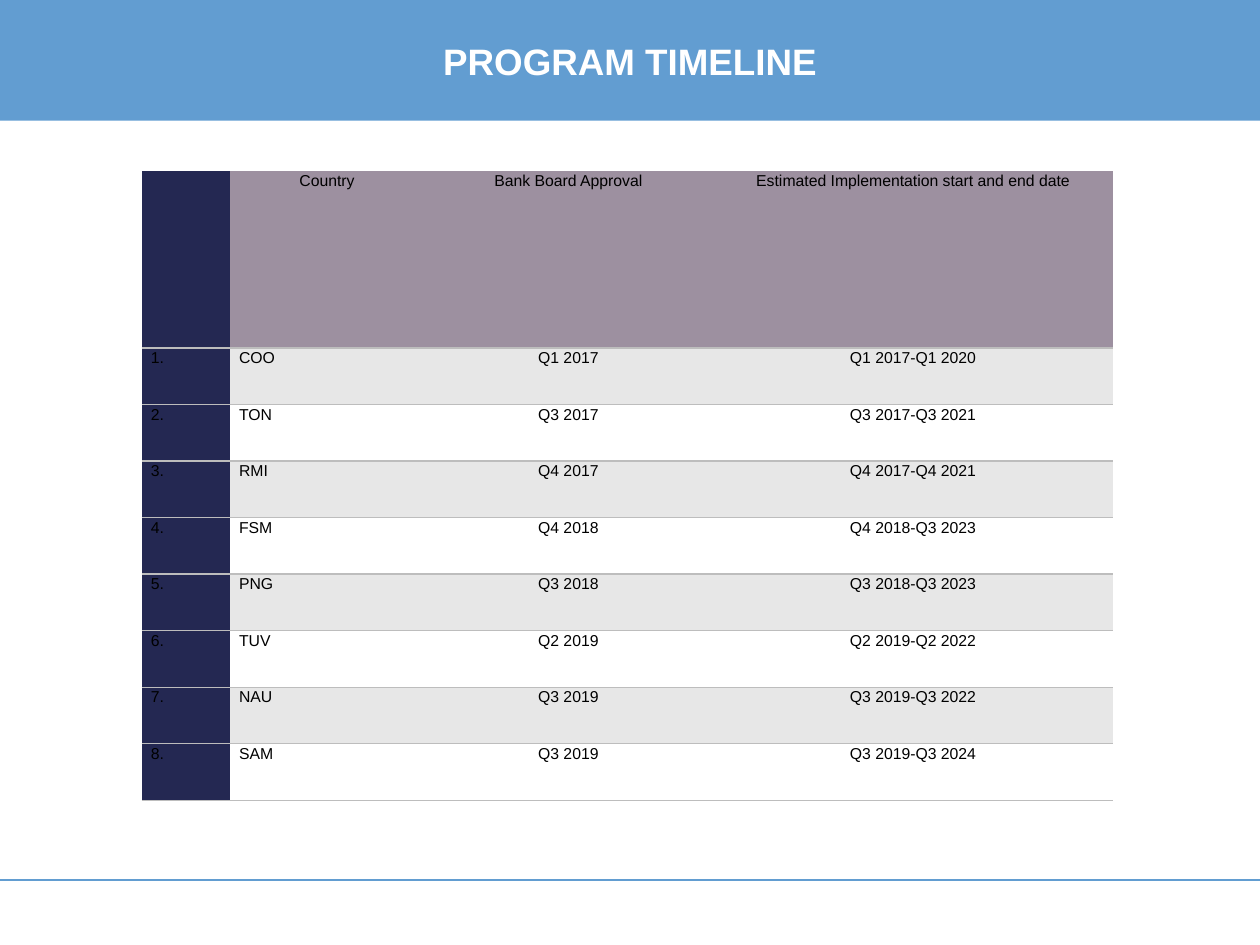
from lxml import etree
from pptx import Presentation
from pptx.dml.color import RGBColor
from pptx.enum.shapes import MSO_CONNECTOR, MSO_SHAPE
from pptx.enum.text import MSO_ANCHOR, PP_ALIGN
from pptx.oxml.ns import qn
from pptx.util import Pt

RECT = MSO_SHAPE.RECTANGLE
STRAIGHT = MSO_CONNECTOR.STRAIGHT
MIDDLE = MSO_ANCHOR.MIDDLE
LEFT, CENTER = PP_ALIGN.LEFT, PP_ALIGN.CENTER

FONT = "Arial"
COLORS = {"blue": "629DD1", "navy": "242852", "mauve": "9D90A0",
          "band": "E7E7E7", "rule": "BDBDBD", "white": "FFFFFF",
          "black": "000000"}
NO_TABLE_STYLE = "{2D5ABB26-0587-4C30-8999-92F81FD0307C}"

HEADER = ["", "Country", "Bank Board Approval",
          "Estimated Implementation start and end date"]
# Country, approval quarter, end quarter; work starts on approval
PROGRAMS = [
    ("COO", "Q1 2017", "Q1 2020"),
    ("TON", "Q3 2017", "Q3 2021"),
    ("RMI", "Q4 2017", "Q4 2021"),
    ("FSM", "Q4 2018", "Q3 2023"),
    ("PNG", "Q3 2018", "Q3 2023"),
    ("TUV", "Q2 2019", "Q2 2022"),
    ("NAU", "Q3 2019", "Q3 2022"),
    ("SAM", "Q3 2019", "Q3 2024"),
]
COL_WIDTHS = [50.4, 110.9, 164.9, 229]
HEADER_HEIGHT = 101.5


def rgb(name):
    return RGBColor.from_string(COLORS[name])


def format_runs(p, size, color, bold=False):
    for r in p.runs:
        r.font.name = FONT
        r.font.size = Pt(size)
        r.font.bold = bold
        r.font.color.rgb = rgb(color)


def add_title(slide, text, x, y, w, h):
    # Band behind the title placeholder
    band = slide.shapes.add_shape(RECT, Pt(x), Pt(y), Pt(w), Pt(h))
    band.shadow.inherit = False
    band.fill.solid()
    band.fill.fore_color.rgb = rgb("blue")
    band.line.fill.background()

    title = slide.shapes.title
    title.element.addprevious(band.element)
    title.left, title.top = Pt(x + 36), Pt(y + 0.5)
    title.width, title.height = Pt(w - 72), Pt(h - 0.5)
    tf = title.text_frame
    tf.margin_left = tf.margin_right = tf.margin_top = tf.margin_bottom = 0
    tf.vertical_anchor = MIDDLE
    tf.text = text
    p = tf.paragraphs[0]
    p.alignment = CENTER
    format_runs(p, 21, "white", bold=True)


def add_footer_rule(slide, x, y, w):
    rule = slide.shapes.add_connector(STRAIGHT, Pt(x), Pt(y), Pt(x + w), Pt(y))
    rule.line.color.rgb = rgb("blue")
    rule.line.width = Pt(1)
    etree.SubElement(rule.element.spPr, qn("a:effectLst"))


def add_bottom_border(cell):
    ln = etree.Element(qn("a:lnB"), w=str(Pt(1)))
    fill = etree.SubElement(ln, qn("a:solidFill"))
    etree.SubElement(fill, qn("a:srgbClr"), val=COLORS["rule"])
    cell._tc.get_or_add_tcPr().insert(0, ln)


def fill_cell(cell, text, align, fill):
    cell.margin_left = cell.margin_right = Pt(5.2)
    cell.margin_top = cell.margin_bottom = 0
    if fill:
        cell.fill.solid()
        cell.fill.fore_color.rgb = rgb(fill)
    else:
        cell.fill.background()
    add_bottom_border(cell)
    if text:
        cell.text_frame.text = text
        p = cell.text_frame.paragraphs[0]
        p.alignment = align
        p.line_spacing = 1.07
        format_runs(p, 9, "black")


def add_timeline_table(slide, x, y, w, h):
    rows = [HEADER] + [[f"{n}.", country, start, f"{start}-{end}"]
                       for n, (country, start, end) in enumerate(PROGRAMS, 1)]
    frame = slide.shapes.add_table(len(rows), len(HEADER),
                                   Pt(x), Pt(y), Pt(w), Pt(h))
    table = frame.table
    table.first_row = table.horz_banding = False
    frame.element.find(".//" + qn("a:tableStyleId")).text = NO_TABLE_STYLE

    for column, width in zip(table.columns, COL_WIDTHS):
        column.width = Pt(width)
    row_height = (h - HEADER_HEIGHT) / len(PROGRAMS)
    for i, values in enumerate(rows):
        table.rows[i].height = Pt(row_height if i else HEADER_HEIGHT)
        row_fill = "mauve" if i == 0 else "band" if i % 2 else None
        for j, text in enumerate(values):
            align = LEFT if i and j < 2 else CENTER
            fill_cell(table.cell(i, j), text, align, row_fill if j else "navy")


def main():
    prs = Presentation()
    prs.slide_width, prs.slide_height = Pt(720), Pt(540)
    slide = prs.slides.add_slide(prs.slide_layouts[5])
    add_title(slide, "PROGRAM TIMELINE", 0, 0, 720, 69)
    add_footer_rule(slide, 0, 503, 720)
    add_timeline_table(slide, 81, 97.5, sum(COL_WIDTHS), 360)
    prs.save("out.pptx")


if __name__ == "__main__":
    main()
